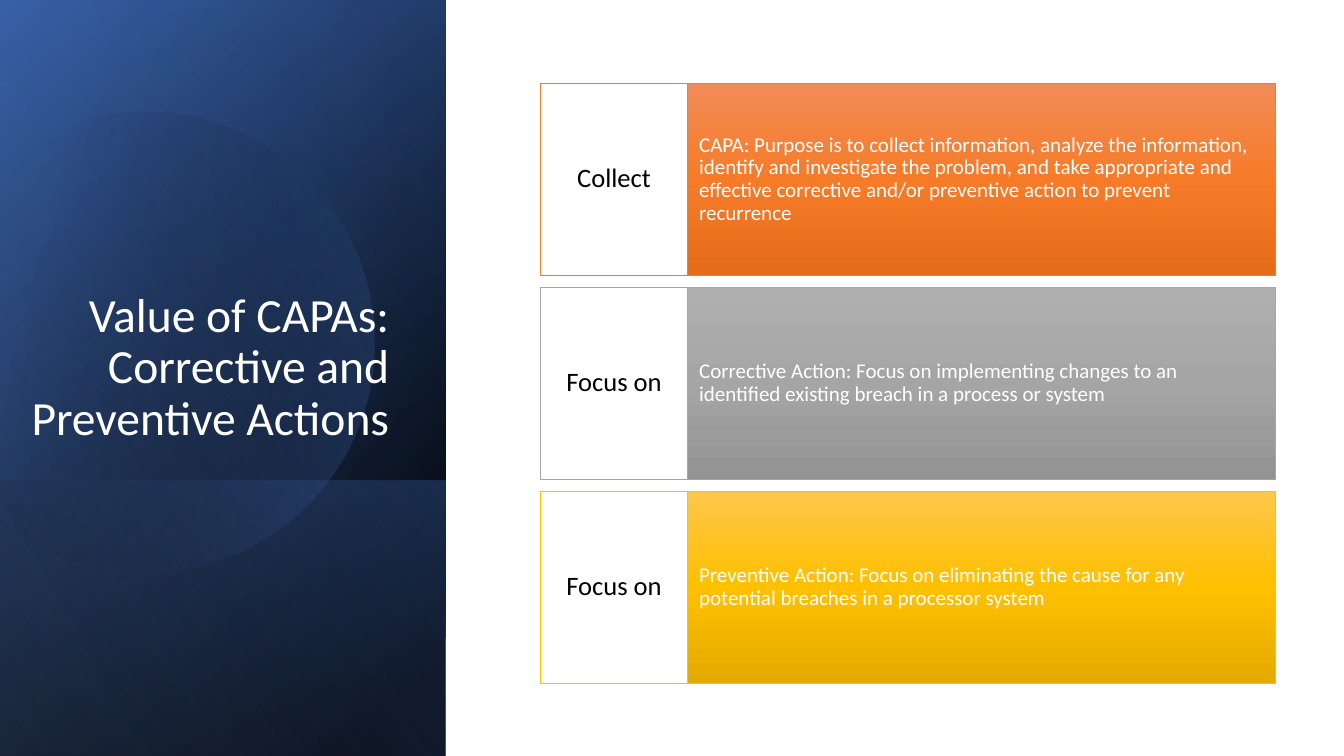
from math import cos, radians, sin

from lxml.etree import SubElement
from pptx import Presentation
from pptx.dml.color import RGBColor
from pptx.enum.shapes import MSO_SHAPE as Preset
from pptx.enum.text import MSO_ANCHOR as Anchor, PP_ALIGN as Align
from pptx.oxml.ns import qn
from pptx.util import Cm, Pt

WHITE = RGBColor(0xFF, 0xFF, 0xFF)
BLACK = RGBColor(0x00, 0x00, 0x00)
NAVY = RGBColor(0x2F, 0x55, 0x97)
BLUE = RGBColor(0x44, 0x72, 0xC4)
PALE_BLUE = RGBColor(0x8F, 0xAA, 0xDC)
ORANGE = RGBColor(0xED, 0x7D, 0x31)
ORANGE_TOP = RGBColor(0xF1, 0x8C, 0x57)
ORANGE_MIDDLE = RGBColor(0xF6, 0x7B, 0x28)
ORANGE_BOTTOM = RGBColor(0xE5, 0x6C, 0x19)
GRAY = RGBColor(0xA5, 0xA5, 0xA5)
GRAY_TOP = RGBColor(0xAF, 0xAF, 0xAF)
GRAY_BOTTOM = RGBColor(0x93, 0x93, 0x93)
GOLD = RGBColor(0xFF, 0xC0, 0x00)
GOLD_TOP = RGBColor(0xFF, 0xC6, 0x4B)
GOLD_BOTTOM = RGBColor(0xE3, 0xAB, 0x00)

PANEL = (-3.91, 3.91, 19.05, 11.23)
LABEL_LEFT, LABEL_WIDTH = 13.62, 3.71
DETAIL_LEFT, DETAIL_WIDTH = LABEL_LEFT + LABEL_WIDTH, 14.81
CARD_TOP, CARD_HEIGHT, CARD_PITCH = 2.1, 4.84, 5.14

CARDS = [
    ("Collect",
     "CAPA: Purpose is to collect information, analyze the information, identify and "
     "investigate the problem, and take appropriate and effective corrective and/or "
     "preventive action to prevent recurrence",
     ORANGE, (ORANGE_TOP, ORANGE_MIDDLE, ORANGE_BOTTOM)),
    ("Focus on",
     "Corrective Action: Focus on implementing changes to an identified existing "
     "breach in a process or system",
     GRAY, (GRAY_TOP, GRAY, GRAY_BOTTOM)),
    ("Focus on",
     "Preventive Action: Focus on eliminating the cause for any potential breaches "
     "in a processor system",
     GOLD, (GOLD_TOP, GOLD, GOLD_BOTTOM)),
]


def write(shape, text, size, color, align=Align.LEFT, anchor=Anchor.MIDDLE,
          inset=(0.25, 0.13), font="Calibri"):
    frame = shape.text_frame
    frame.word_wrap = True
    frame.vertical_anchor = anchor
    frame.margin_left = frame.margin_right = Cm(inset[0])
    frame.margin_top = frame.margin_bottom = Cm(inset[1])
    para = frame.paragraphs[0]
    para.alignment = align
    para.line_spacing = 0.9
    span = para.add_run()
    span.text = text
    span.font.name = font
    span.font.size = Pt(size)
    span.font.color.rgb = color


class SlideBuilder:
    line_width = Pt(0.5)

    def __init__(self, page):
        self.page = page

    def gradient(self, shape, stops, angle):
        shape.fill.gradient()
        shape.fill.gradient_angle = -angle % 360
        stop_list = shape.element.spPr.find(qn("a:gradFill")).find(qn("a:gsLst"))
        stop_list.clear()
        for position, color, opacity in stops:
            stop = SubElement(stop_list, qn("a:gs"), pos=str(position * 1000))
            value = SubElement(stop, qn("a:srgbClr"), val=str(color))
            if opacity < 100:
                SubElement(value, qn("a:alpha"), val=str(opacity * 1000))

    def rectangle(self, bounds, outline=None):
        box = self.page.shapes.add_shape(Preset.RECTANGLE, *map(Cm, bounds))
        box.shadow.inherit = False
        if outline is None:
            box.line.fill.background()
        else:
            box.line.color.rgb = outline
            box.line.width = self.line_width
        return box

    def backdrop(self, bounds, stops, angle):
        box = self.rectangle(bounds)
        self.gradient(box, stops, angle)
        box.rotation = 90
        box.element.spPr.find(qn("a:xfrm")).set("flipH", "1")

    def cut_circle(self, center, radius, turns, stops, angle, rotation):
        points = [
            (Cm(center[0] + radius * cos(radians(turn))),
             Cm(center[1] + radius * sin(radians(turn))))
            for turn in turns
        ]
        builder = self.page.shapes.build_freeform(*points[0])
        builder.add_line_segments(points[1:], close=True)
        disc = builder.convert_to_shape()
        reach = str(Cm(radius))
        segments = list(disc.element.spPr.iter(qn("a:lnTo")))
        for segment, start, end in zip(segments, turns, turns[1:]):
            segment.clear()
            segment.tag = qn("a:arcTo")
            segment.set("wR", reach)
            segment.set("hR", reach)
            segment.set("stAng", str(int(start % 360 * 60000)))
            segment.set("swAng", str(int((end - start) * 60000)))
        disc.shadow.inherit = False
        disc.line.fill.background()
        self.gradient(disc, stops, angle)
        disc.rotation = rotation

    def title(self, text, bounds):
        box = self.page.shapes.add_textbox(*map(Cm, bounds))
        write(box, text, 34, WHITE, align=Align.RIGHT, anchor=Anchor.BOTTOM)

    def card(self, top, label, detail, outline, shades):
        detail_box = self.rectangle((DETAIL_LEFT, top, DETAIL_WIDTH, CARD_HEIGHT), outline)
        stops = [(position, shade, 100) for position, shade in zip((0, 50, 100), shades)]
        self.gradient(detail_box, stops, 90)
        write(detail_box, detail, 15, WHITE, inset=(0.29, 1.24))
        label_box = self.rectangle((LABEL_LEFT, top, LABEL_WIDTH, CARD_HEIGHT), outline)
        label_box.fill.solid()
        label_box.fill.fore_color.rgb = WHITE
        write(label_box, label, 19, BLACK, align=Align.CENTER, inset=(0.2, 0.48))


def main():
    deck = Presentation()
    deck.slide_width, deck.slide_height = Cm(33.87), Cm(19.05)
    page = deck.slides.add_slide(deck.slide_layouts[6])
    slide = SlideBuilder(page)

    slide.backdrop(PANEL, [(8, BLACK, 100), (100, NAVY, 100)], 50)
    slide.backdrop(PANEL, [(0, BLACK, 0), (99, BLUE, 46)], 30)
    slide.backdrop((2.13, 9.98, 6.96, 11.23), [(2, BLUE, 29), (100, BLACK, 30)], 130)
    slide.cut_circle((3.62, 8.5), 5.81, (242.5, 270, 360, 450, 509.5),
                     [(29, BLACK, 0), (100, BLUE, 43)], 30, 343.9)
    slide.backdrop(PANEL, [(0, BLACK, 0), (99, PALE_BLUE, 11)], 120)
    slide.title("Value of CAPAs: Corrective and Preventive Actions", (0, 4.86, 10.06, 6.5))

    for index, card in enumerate(CARDS):
        slide.card(CARD_TOP + index * CARD_PITCH, *card)

    deck.save("out.pptx")


if __name__ == "__main__":
    main()
